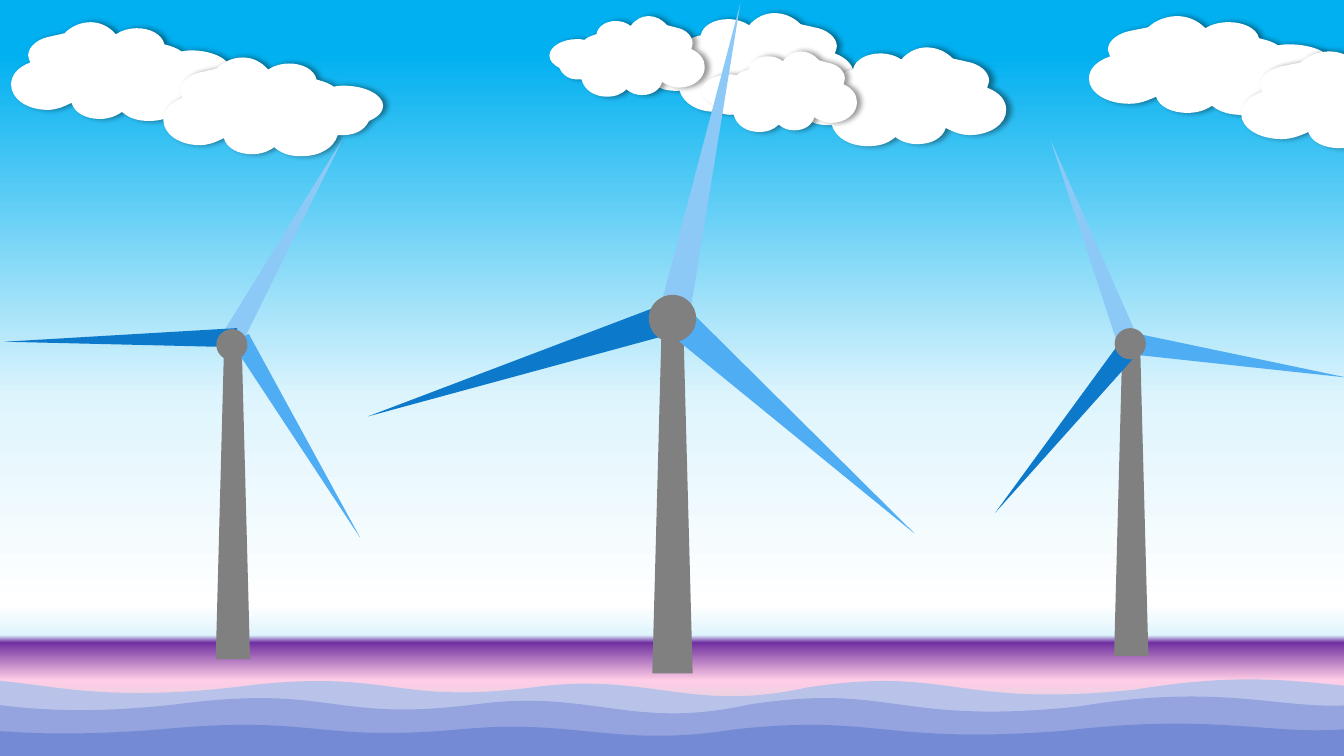
from pptx import Presentation
from pptx.dml.color import RGBColor
from pptx.enum.shapes import MSO_SHAPE as Preset
from pptx.oxml import parse_xml
from pptx.oxml.ns import nsdecls
from pptx.util import Inches, Pt

SLIDE_W, SLIDE_H = 13.33, 7.5
GREY, WHITE = "808080", "FFFFFF"
BLADE_COLORS = ("8CC9F7", "4FADF3", "0D79CA")
BLADE_STEP = 120  # degrees between blades

# Sky stops: percent, colour, opacity
SKY = [(7, "00B0F0", 100), (53, "DFF5FD", 100), (80, "FFFFFF", 100),
       (84, "DFF5FD", 100), (85, "7030A0", 25), (90, "FFCDE6", 100),
       (100, "9EE2CF", 100)]

# Outlines: pairs are corners, sextets are cubic curves
CLOUD_SIZE = (218, 98)
CLOUD = [
    (79, 0), (88, 0, 97, 4, 104, 12), (110, 8, 117, 6, 125, 6),
    (138, 6, 150, 12, 152, 22), (160, 24, 165, 26, 169, 29),
    (174, 28, 176, 28, 179, 28), (200, 28, 218, 37, 218, 48),
    (218, 54, 213, 59, 204, 63), (199, 73, 189, 78, 173, 77),
    (169, 90, 155, 98, 137, 98), (127, 98, 118, 96, 110, 89),
    (103, 94, 96, 96, 88, 96), (74, 96, 63, 90, 60, 80),
    (50, 85, 44, 87, 36, 87), (16, 87, 0, 76, 0, 62), (0, 53, 6, 45, 19, 40),
    (18, 37, 17, 35, 17, 33), (17, 24, 27, 16, 40, 14),
    (48, 12, 50, 12, 53, 11), (60, 4, 69, 0, 79, 0),
]
WAVE_SIZE = (1779, 60)
WAVE = [
    (1779, 3), (1777, 60), (0, 60), (0, 0), (74, 13, 92, 22, 258, 5),
    (368, -14, 393, 28, 576, 8), (733, -13, 730, 26, 873, 8),
    (990, -8, 1028, 34, 1146, 8), (1289, -14, 1291, 29, 1472, 10),
    (1639, -18, 1689, 24, 1779, 3),
]


def rgb(color):
    return RGBColor.from_string(color)


def paint(shape, color):
    shape.fill.solid()
    shape.fill.fore_color.rgb = rgb(color)
    shape.line.fill.background()
    shape.shadow.inherit = False
    return shape


def preset(shapes, kind, center_x, center_y, width, height, color, angle=0):
    shape = shapes.add_shape(kind, Inches(center_x - width / 2), Inches(center_y - height / 2),
                             Inches(width), Inches(height))
    shape.rotation = angle
    return paint(shape, color)


def outline(shapes, segments, size, box, color, mirrored=False):
    left, top, width, height = box

    def place(x, y):
        share = 1 - x / size[0] if mirrored else x / size[0]
        return Inches(left + share * width), Inches(top + y / size[1] * height)

    anchors = [place(*segment[-2:]) for segment in segments]
    builder = shapes.build_freeform(*anchors[0])
    builder.add_line_segments(anchors[1:], close=True)
    shape = builder.convert_to_shape()

    # Bend the straight sides into cubic curves
    origin_x, origin_y = (min(values) for values in zip(*anchors))
    for side, segment in zip(shape.element.xpath(".//a:lnTo"), segments[1:]):
        if len(segment) == 6:
            points = [place(*segment[i:i + 2]) for i in (0, 2, 4)]
            marks = "".join(f'<a:pt x="{x - origin_x}" y="{y - origin_y}"/>' for x, y in points)
            side.getparent().replace(side, parse_xml(
                f'<a:cubicBezTo {nsdecls("a")}>{marks}</a:cubicBezTo>'))
    return paint(shape, color)


# Sky
def sky(slide):
    fill = slide.background.fill
    fill.gradient()
    fill.gradient_angle = 270
    stops = slide.element.xpath(".//a:gsLst")[0]
    for stop in list(stops):
        stops.remove(stop)
    for percent, color, opacity in SKY:
        alpha = f'<a:alpha val="{opacity * 1000}"/>' if opacity < 100 else ""
        stops.append(parse_xml(
            f'<a:gs {nsdecls("a")} pos="{percent * 1000}">'
            f'<a:srgbClr val="{color}">{alpha}</a:srgbClr></a:gs>'))


# Clouds
def cloud_bank(slide, clouds):
    bank = slide.shapes.add_group_shape().shapes
    for *box, mirrored in clouds:
        cloud = outline(bank, CLOUD, CLOUD_SIZE, box, WHITE, mirrored)
        cloud.element.xpath(".//a:effectLst")[0].append(parse_xml(
            f'<a:outerShdw {nsdecls("a")} blurRad="{Pt(4)}" dist="{Pt(3)}" dir="0" '
            'algn="l" rotWithShape="0"><a:srgbClr val="000000">'
            '<a:alpha val="40000"/></a:srgbClr></a:outerShdw>'))


# Sea
def wave(slide, left, top, height, color):
    outline(slide.shapes, WAVE, WAVE_SIZE, (left, top, 17.79, height), color)


# Turbines
def tower(slide, center_x, top, width, height):
    preset(slide.shapes, Preset.TRAPEZOID, center_x, top + height / 2, width, height, GREY)


def rotor(slide, hub_x, hub_y, hub_size, first_angle, blades):
    """Each blade: centre offset from the hub, width and length."""
    group = slide.shapes.add_group_shape().shapes
    for index, (dx, dy, width, length) in enumerate(blades):
        preset(group, Preset.ISOSCELES_TRIANGLE, hub_x + dx, hub_y + dy, width, length,
               BLADE_COLORS[index], (first_angle + index * BLADE_STEP) % 360)
    preset(slide.shapes, Preset.OVAL, hub_x, hub_y, hub_size, hub_size, GREY)


def wind_farm(slide):
    sky(slide)
    cloud_bank(slide, [(0.11, 0.22, 2.18, 0.98, False), (6.29, 0.13, 2.18, 0.98, True),
                       (10.8, 0.16, 2.42, 0.98, False), (5.45, 0.16, 1.54, 0.8, True)])
    wave(slide, -3.45, 6.74, 0.6, "B9C3E9")
    wave(slide, -4.03, 6.91, 0.6, "95A4DE")
    tower(slide, 6.67, 2.95, 0.4, 3.73)
    tower(slide, 2.31, 3.33, 0.34, 3.21)
    rotor(slide, 2.3, 3.42, 0.31, 29, [(0.55, -1.05, 0.22, 2.31), (0.68, 0.93, 0.19, 2.31),
                                       (-1.1, -0.05, 0.19, 2.31)])
    tower(slide, 11.22, 3.3, 0.34, 3.21)
    rotor(slide, 11.21, 3.41, 0.31, 339, [(-0.41, -1.03, 0.21, 2.13), (1.1, 0.17, 0.21, 2.13),
                                          (-0.67, 0.85, 0.21, 2.13)])
    cloud_bank(slide, [(1.62, 0.57, 2.18, 0.98, False), (7.8, 0.47, 2.18, 0.98, True),
                       (12.31, 0.51, 2.42, 0.98, False), (6.96, 0.51, 1.54, 0.8, True)])
    wave(slide, -4.18, 7.18, 0.43, "758AD5")
    rotor(slide, 6.67, 3.16, 0.47, 12, [(0.34, -1.56, 0.31, 3.21), (1.22, 1.07, 0.31, 3.18),
                                        (-1.51, 0.48, 0.31, 3.18)])


def main():
    deck = Presentation()
    deck.slide_width, deck.slide_height = Inches(SLIDE_W), Inches(SLIDE_H)
    wind_farm(deck.slides.add_slide(deck.slide_layouts[6]))
    deck.save("out.pptx")


if __name__ == "__main__":
    main()
